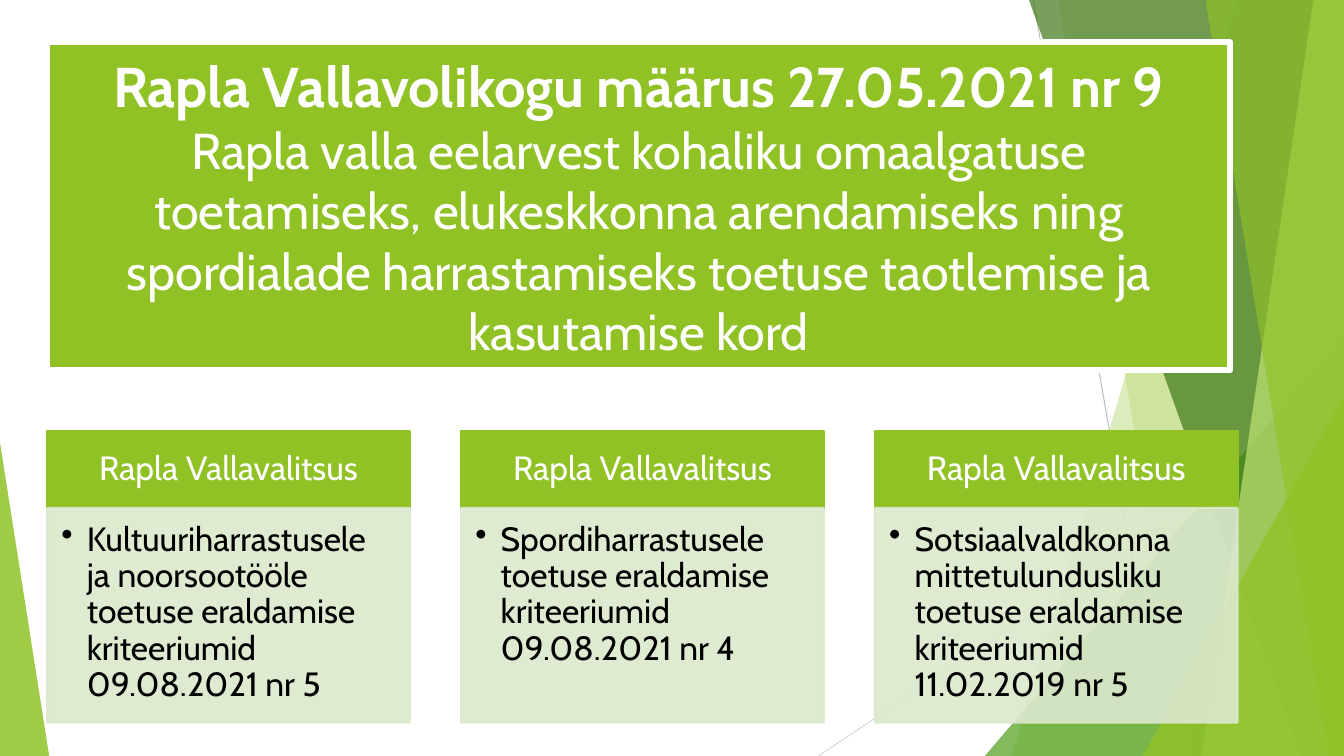
from lxml.etree import SubElement
from pptx import Presentation
from pptx.dml.color import RGBColor
from pptx.enum.shapes import MSO_CONNECTOR as CONN, MSO_SHAPE as SHAPE
from pptx.enum.text import MSO_ANCHOR as ANCHOR, MSO_AUTO_SIZE as AUTO, PP_ALIGN as ALIGN
from pptx.oxml.ns import qn
from pptx.util import Cm, Pt

TITLE = "Rapla Vallavolikogu määrus 27.05.2021 nr 9"
SUBTITLE = ("Rapla valla eelarvest kohaliku omaalgatuse toetamiseks, elukeskkonna "
            "arendamiseks ning spordialade harrastamiseks toetuse taotlemise ja kasutamise kord")
CARDS = [
    ("Rapla Vallavalitsus",
     "Kultuuriharrastusele ja noorsootööle toetuse eraldamise kriteeriumid 09.08.2021 nr 5"),
    ("Rapla Vallavalitsus",
     "Spordiharrastusele toetuse eraldamise kriteeriumid 09.08.2021 nr 4"),
    ("Rapla Vallavalitsus",
     "Sotsiaalvaldkonna mittetulundusliku toetuse eraldamise kriteeriumid 11.02.2019 nr 5"),
]
FONT = "Cabin"
COLORS = {
    "lime": "90C226", "green": "54A021", "forest": "3F7819", "light": "C0E474",
    "pale": "DBE9CD", "white": "FFFFFF", "black": "000000",
    "gray": "BFBFBF", "silver": "D9D9D9",
}

# All lengths are centimetres
W, H = 33.87, 19.05
LINES = [((26.04, 0), (29.41, H), "gray"), ((W, 10.24), (20.62, H), "silver")]
# Bands reach the right edge: top x, bottom x, colour, opacity
# Triangles: left, top, width, apex position, colour, opacity
DECOR = [
    ("band", (31.19, 25.5), "lime", 30),
    ("band", (26.67, 30.05), "lime", 20),
    ("triangle", (24.82, 8.46, 9.05, 1), "green", 72),
    ("band", (25.93, 32.79), "forest", 70),
    ("band", (33.1, 30.28), "light", 70),
    ("band", (30.38, 33.48), "lime", 65),
    ("triangle", (28.8, 9.98, 5.07, 1), "lime", 80),
    ("triangle", (0, 11.15, 1.24, 0), "lime", 85),
]
TITLE_BOX = (1.19, 1.07, 29.82, 8.25)
CARD_LEFT, CARD_PITCH, CARD_W = 1.19, 10.43, 9.14
HEAD_TOP, HEAD_H, BODY_H = 10.87, 1.93, 5.41
BULLET_INDENT = 0.64


def rgb(name):
    return RGBColor.from_string(COLORS[name])


def paint(sp, fill, line=None, width=1.5, alpha=100):
    sp.shadow.inherit = False
    sp.fill.solid()
    sp.fill.fore_color.rgb = rgb(fill)
    if line:
        sp.line.color.rgb = rgb(line)
        sp.line.width = Pt(width)
    else:
        sp.line.fill.background()
    if alpha < 100:
        for clr in sp._element.spPr.iter(qn("a:srgbClr")):
            SubElement(clr, qn("a:alpha"), val=str(alpha * 1000))


def write(p, text, size=24, color="white", bold=False, align=ALIGN.CENTER, spacing=None):
    p.alignment = align
    if spacing:
        p.line_spacing = spacing
    r = p.add_run()
    r.text = text
    r.font.name, r.font.size, r.font.bold = FONT, Pt(size), bold
    r.font.color.rgb = rgb(color)


def set_frame(tf, anchor, left, top, right, bottom):
    tf.word_wrap, tf.auto_size, tf.vertical_anchor = True, AUTO.NONE, anchor
    tf.margin_left, tf.margin_top = Cm(left), Cm(top)
    tf.margin_right, tf.margin_bottom = Cm(right), Cm(bottom)


def add_bullet(p):
    pPr = p._p.get_or_add_pPr()
    pPr.set("marL", str(Cm(BULLET_INDENT)))
    pPr.set("indent", str(-Cm(BULLET_INDENT)))
    SubElement(pPr, qn("a:buChar"), char="•")


def add_decor(s):
    for start, end, color in LINES:
        line = s.shapes.add_connector(CONN.STRAIGHT, *map(Cm, start + end))
        line.line.color.rgb = rgb(color)
        line.line.width = Pt(0.75)
        SubElement(line._element.spPr, qn("a:effectLst"))
    for kind, geometry, color, alpha in DECOR:
        if kind == "band":
            top_x, bottom_x = geometry
            builder = s.shapes.build_freeform(Cm(top_x), 0)
            builder.add_line_segments(
                [(Cm(W), 0), (Cm(W), Cm(H)), (Cm(bottom_x), Cm(H))], close=True)
            sp = builder.convert_to_shape()
        else:
            left, top, width, apex = geometry
            sp = s.shapes.add_shape(SHAPE.ISOSCELES_TRIANGLE,
                                    *map(Cm, (left, top, width, H - top)))
            sp.adjustments[0] = apex
        paint(sp, color, alpha=alpha)


def add_title(s):
    sp = s.shapes.title
    s.shapes._spTree.append(sp._element)  # bring in front of the decoration
    sp.left, sp.top, sp.width, sp.height = map(Cm, TITLE_BOX)
    paint(sp, "lime", "white", 4.25)
    set_frame(sp.text_frame, ANCHOR.MIDDLE, 0.25, 0.13, 0.25, 0.13)
    p = sp.text_frame.paragraphs[0]
    write(p, TITLE, size=40, bold=True)
    p.add_line_break()
    write(p, SUBTITLE, size=36)


def add_card(s, left, head, body):
    sp = s.shapes.add_shape(SHAPE.RECTANGLE, *map(Cm, (left, HEAD_TOP, CARD_W, HEAD_H)))
    paint(sp, "lime", "lime")
    set_frame(sp.text_frame, ANCHOR.MIDDLE, 0.48, 0.28, 0.48, 0.28)
    write(sp.text_frame.paragraphs[0], head, spacing=0.9)

    sp = s.shapes.add_shape(SHAPE.RECTANGLE,
                            *map(Cm, (left, HEAD_TOP + HEAD_H, CARD_W, BODY_H)))
    paint(sp, "pale", "pale", alpha=90)
    set_frame(sp.text_frame, ANCHOR.TOP, 0.36, 0.36, 0.48, 0.53)
    p = sp.text_frame.paragraphs[0]
    write(p, body, color="black", align=ALIGN.LEFT, spacing=0.9)
    add_bullet(p)


def main():
    prs = Presentation()
    prs.slide_width, prs.slide_height = Cm(W), Cm(H)
    s = prs.slides.add_slide(prs.slide_layouts[5])
    add_decor(s)
    add_title(s)
    for i, (head, body) in enumerate(CARDS):
        add_card(s, CARD_LEFT + i * CARD_PITCH, head, body)
    prs.save("out.pptx")


if __name__ == "__main__":
    main()
